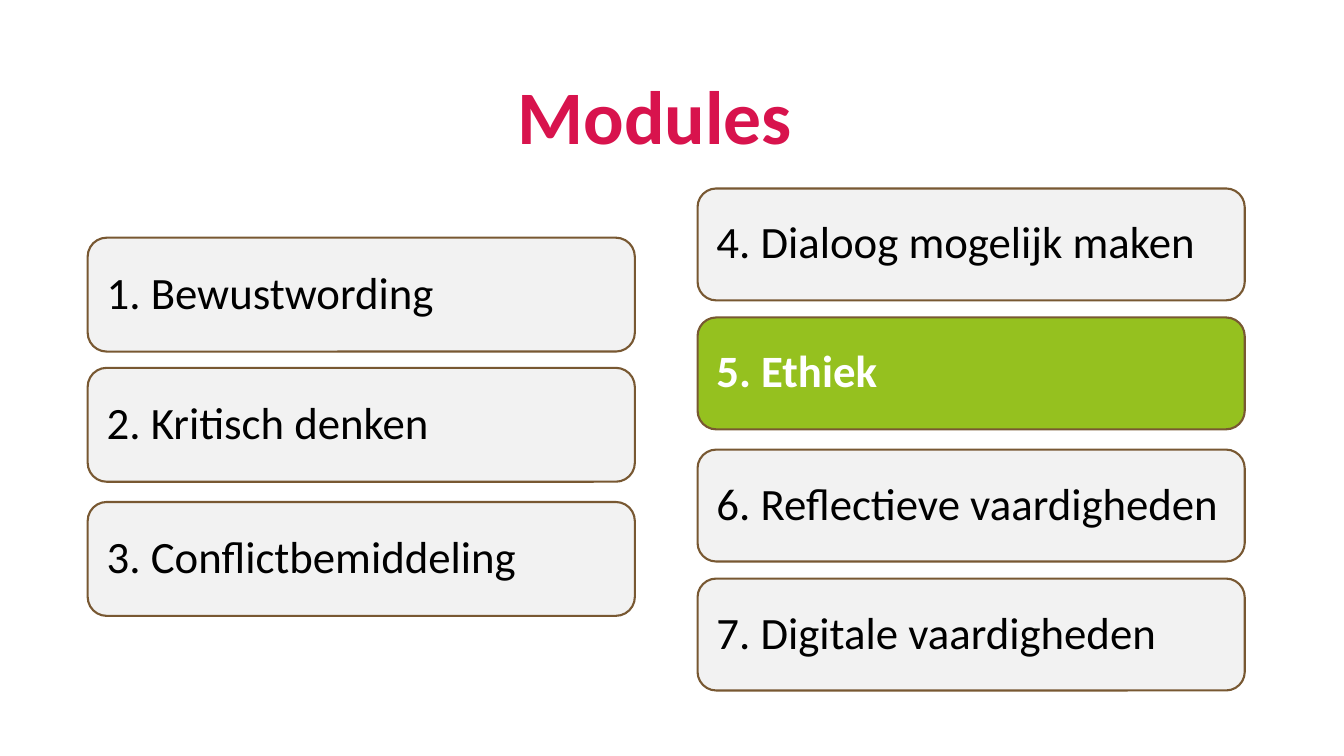
from pptx import Presentation
from pptx.dml.color import RGBColor
from pptx.enum.shapes import MSO_SHAPE
from pptx.enum.text import MSO_ANCHOR, PP_ALIGN
from pptx.util import Cm, Pt

ROUNDED = MSO_SHAPE.ROUNDED_RECTANGLE
BOTTOM, MIDDLE = MSO_ANCHOR.BOTTOM, MSO_ANCHOR.MIDDLE
LEFT, CENTER = PP_ALIGN.LEFT, PP_ALIGN.CENTER

CRIMSON = RGBColor(0xD8, 0x13, 0x4D)
LIGHT_GREY = RGBColor(0xF2, 0xF2, 0xF2)
GREEN = RGBColor(0x95, 0xC1, 0x1F)
BROWN = RGBColor(0x78, 0x58, 0x32)
BLACK = RGBColor(0, 0, 0)
WHITE = RGBColor(0xFF, 0xFF, 0xFF)

CURRENT_MODULE = "5. Ethiek"
MODULE_WIDTH = 13.79
# Left edge, module height, then the top edge and label of each module (cm)
COLUMNS = [
    (2.21, 2.87, [
        (5.99, "1. Bewustwording"),
        (9.27, "2. Kritisch denken"),
        (12.65, "3. Conflictbemiddeling"),
    ]),
    (17.58, 2.82, [
        (4.75, "4. Dialoog mogelijk maken"),
        (8, CURRENT_MODULE),
        (11.33, "6. Reflectieve vaardigheden"),
        (14.58, "7. Digitale vaardigheden"),
    ]),
]


def write_text(shape, text, size, color, bold, alignment, anchor):
    text_frame = shape.text_frame
    text_frame.word_wrap = True
    text_frame.vertical_anchor = anchor
    text_frame.text = text
    paragraph = text_frame.paragraphs[0]
    paragraph.alignment = alignment
    paragraph.line_spacing = 0.9
    font = paragraph.runs[0].font
    font.name = "Calibri"
    font.size = Pt(size)
    font.bold = bold
    font.color.rgb = color


def add_title(slide, text):
    title = slide.shapes.add_textbox(Cm(0.03), Cm(-0.76), Cm(32.94), Cm(4.95))
    write_text(title, text, 54, CRIMSON, True, CENTER, BOTTOM)


def add_module(slide, left, top, height, label):
    """Draw one module box, highlighted when it is the current module."""
    current = label == CURRENT_MODULE
    shape = slide.shapes.add_shape(
        ROUNDED, Cm(left), Cm(top), Cm(MODULE_WIDTH), Cm(height))
    shape.shadow.inherit = False
    shape.fill.solid()
    shape.fill.fore_color.rgb = GREEN if current else LIGHT_GREY
    shape.line.color.rgb = BROWN
    shape.line.width = Pt(1.5)
    text_frame = shape.text_frame
    text_frame.margin_left = text_frame.margin_right = Cm(0.34)
    text_frame.margin_top = text_frame.margin_bottom = Cm(0.34)
    color = WHITE if current else BLACK
    write_text(shape, label, 32, color, current, LEFT, MIDDLE)


def main():
    presentation = Presentation()
    presentation.slide_width = Cm(33.87)
    presentation.slide_height = Cm(19.05)
    slide = presentation.slides.add_slide(presentation.slide_layouts[6])
    add_title(slide, "Modules")
    for left, height, modules in COLUMNS:
        for top, label in modules:
            add_module(slide, left, top, height, label)
    presentation.save("out.pptx")


if __name__ == "__main__":
    main()
